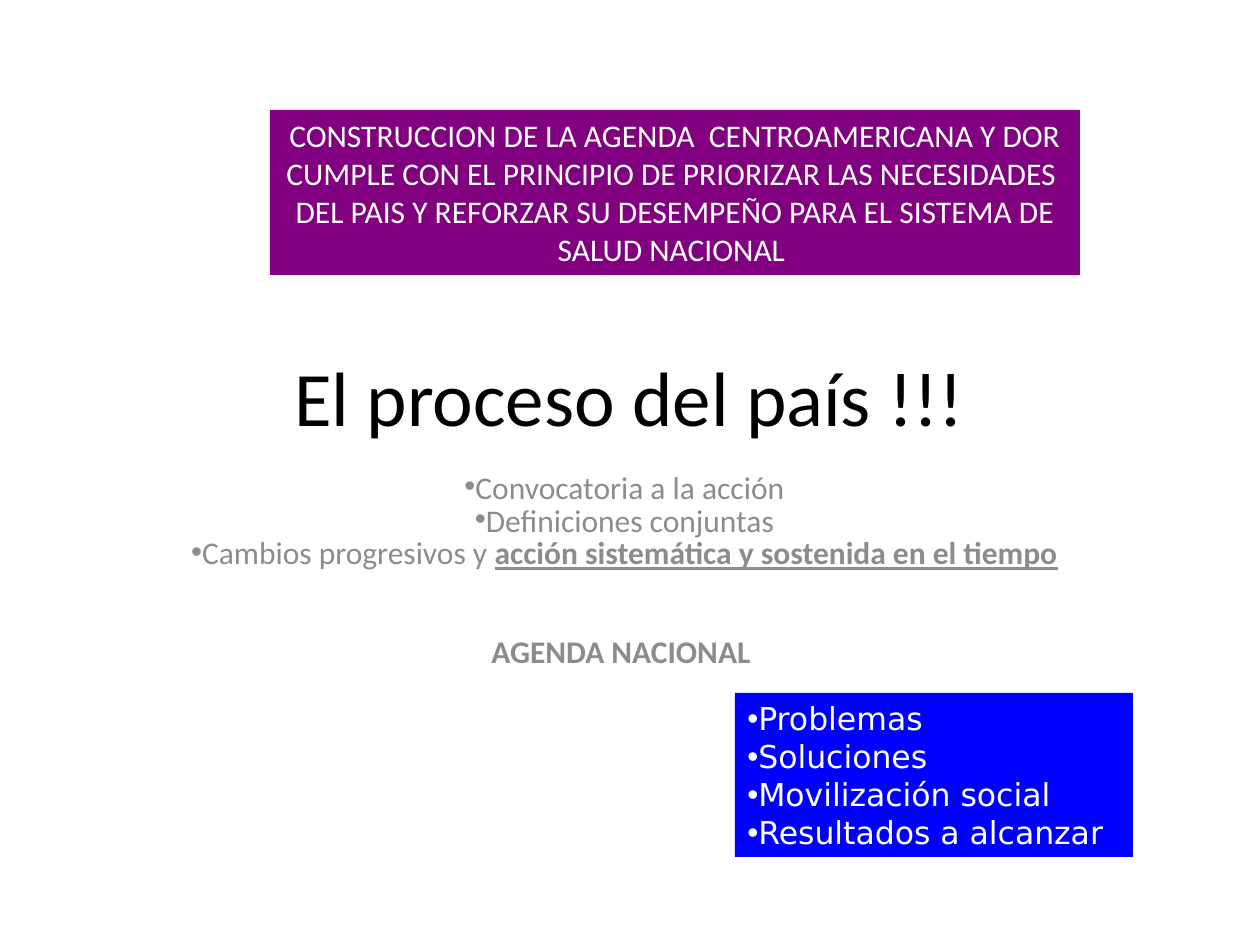
from dataclasses import dataclass
from lxml.etree import SubElement
from pptx import Presentation
from pptx.dml.color import RGBColor as RGB
from pptx.enum.shapes import MSO_SHAPE as Shape
from pptx.enum.text import MSO_ANCHOR as Anchor, MSO_AUTO_SIZE as Fit, PP_ALIGN as Align
from pptx.oxml.ns import qn
from pptx.util import Emu, Pt

# Content: each line is (bulleted, runs), each run is (text, bold, underlined)
TITLE = [(False, [("El proceso del país !!!", False, False)])]
STEPS = [
    (True, [("Convocatoria a la acción", False, False)]),
    (True, [("Definiciones conjuntas", False, False)]),
    (True, [("Cambios progresivos y ", False, False),
            ("acción sistemática y sostenida en el tiempo", True, True)]),
    (False, [("AGENDA NACIONAL ", True, False)]),
]
TOPICS = [(True, [(text, False, False)]) for text in (
    "Problemas", "Soluciones", "Movilización social", "Resultados a alcanzar")]
BANNER = [(False, [(text, False, False)]) for text in (
    "CONSTRUCCION DE LA AGENDA  CENTROAMERICANA Y DOR",
    "CUMPLE CON EL PRINCIPIO DE PRIORIZAR LAS NECESIDADES ",
    "DEL PAIS Y REFORZAR SU DESEMPEÑO PARA EL SISTEMA DE",
    "SALUD NACIONAL ")]


@dataclass(frozen=True)
class Theme:
    font: str = "Calibri"
    alt: str = "DejaVu Sans"
    big: int = 44
    small: int = 18
    black: str = "000000"
    gray: str = "8C8C8C"
    white: str = "FFFFFF"
    blue: str = "0000FF"
    purple: str = "800080"


THEME = Theme()
PX = 914400 // 126


def place(shape, *box):
    shape.left, shape.top, shape.width, shape.height = (Emu(n * PX) for n in box)


def write(shape, lines, size, color, font=THEME.font, align=Align.CENTER,
          anchor=Anchor.TOP, pitch=None, before=0):
    frame = shape.text_frame
    frame.word_wrap = True
    frame.auto_size = Fit.NONE
    frame.vertical_anchor = anchor
    for i, (bullet, runs) in enumerate(lines):
        para = frame.paragraphs[0] if i == 0 else frame.add_paragraph()
        para.alignment = align
        para.space_before = Pt(before)
        if pitch:
            para.line_spacing = pitch
        if bullet:
            props = para._p.get_or_add_pPr()
            SubElement(props, qn("a:buFont")).set("typeface", "Arial")
            SubElement(props, qn("a:buChar")).set("char", "•")
        for text, bold, under in runs:
            run = para.add_run()
            run.text = text
            face = run.font
            face.name, face.size = font, Pt(size)
            face.bold, face.underline = bold, under
            face.color.rgb = RGB.from_string(color)


def add_box(slide, fill, *box):
    shape = slide.shapes.add_shape(Shape.RECTANGLE, 0, 0, 0, 0)
    place(shape, *box)
    shape.shadow.inherit = False
    shape.fill.solid()
    shape.fill.fore_color.rgb = RGB.from_string(fill)
    shape.line.fill.background()
    return shape


def main():
    deck = Presentation()
    deck.slide_width, deck.slide_height = Emu(1260 * PX), Emu(945 * PX)
    slide = deck.slides.add_slide(deck.slide_layouts[0])

    # Title and steps
    title, steps = slide.placeholders
    place(title, 94, 294, 1071, 203)
    write(title, TITLE, THEME.big, THEME.black, anchor=Anchor.MIDDLE)
    place(steps, 84, 472, 1081, 220)
    write(steps, STEPS, THEME.small, THEME.gray, pitch=0.7, before=3.6)
    # The closing line stands apart from the list
    steps.text_frame.paragraphs[-1].space_before = Pt(41)

    # Topics box
    topics = add_box(slide, THEME.blue, 735, 693, 398, 164)
    write(topics, TOPICS, THEME.small, THEME.white, THEME.alt, Align.LEFT,
          pitch=Pt(21.7))

    # Banner
    banner = add_box(slide, THEME.purple, 270, 110, 810, 165)
    write(banner, BANNER, THEME.small, THEME.white)

    deck.save("out.pptx")


if __name__ == "__main__":
    main()
